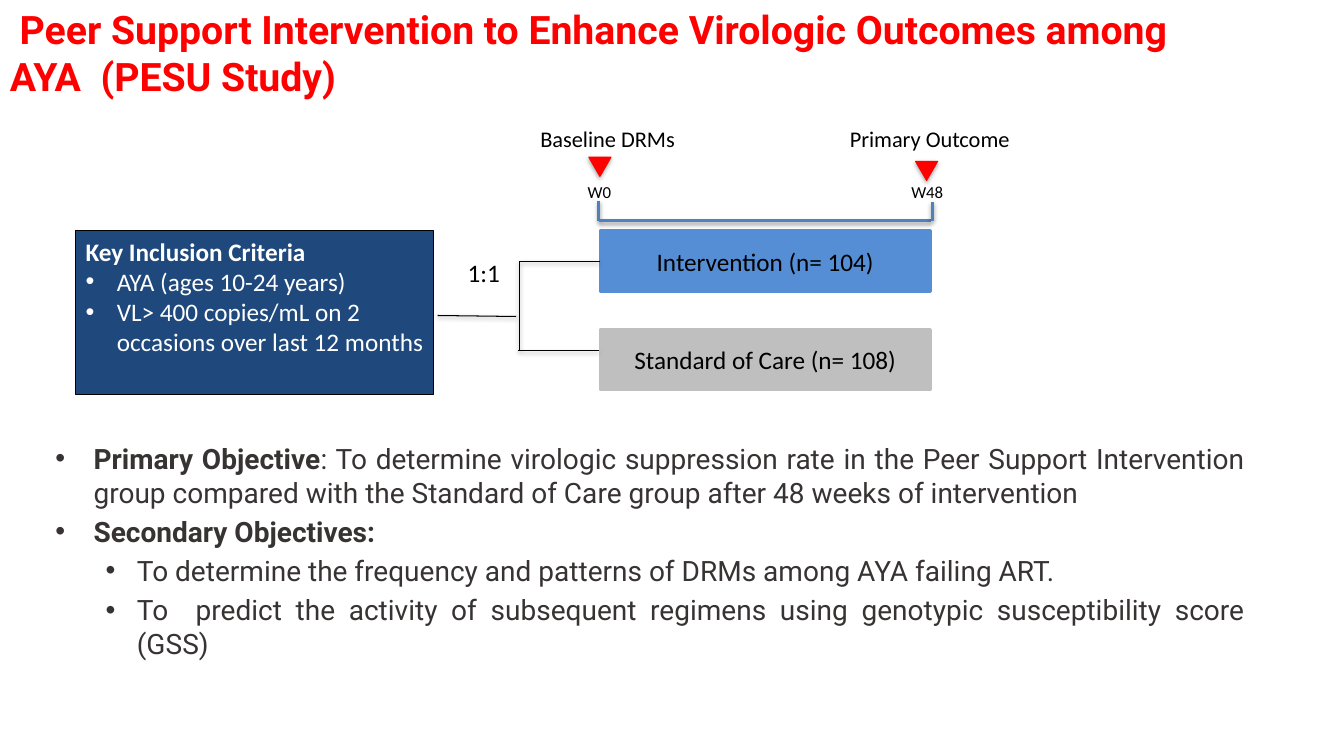
from dataclasses import dataclass

from lxml import etree
from pptx import Presentation
from pptx import util as u
from pptx.dml import color
from pptx.enum import shapes, text
from pptx.oxml import ns

BLACK, WHITE, RED, INK = "000000", "FFFFFF", "FF0000", "383333"
STEEL, NAVY, BLUE, GRAY = "4F81BD", "1F497D", "558ED5", "BFBFBF"
LEFT, MID, JUST = text.PP_ALIGN.LEFT, text.PP_ALIGN.CENTER, text.PP_ALIGN.JUSTIFY


@dataclass
class Run:
    words: str
    bold: bool = False


@dataclass
class Para:
    runs: list[Run]
    margin: float = 0
    hang: float = 0
    level: int = 0


@dataclass
class Style:
    size: float
    font: str = "Calibri"
    ink: str = BLACK
    align: text.PP_ALIGN = LEFT
    gap: float = 0
    middle: bool = False


@dataclass
class Label:
    words: str
    left: float
    top: float
    width: float
    height: float
    size: float


@dataclass
class Arm:
    words: str
    top: float
    fill: str


@dataclass
class Wire:
    x1: float
    y1: float
    x2: float
    y2: float
    ink: str = BLACK
    weight: float = 0.75


def rgb(code: str) -> color.RGBColor:
    return color.RGBColor.from_string(code)


def shade(item, alpha: int, dist: float) -> None:
    """Give a shape or connector a soft shadow straight below it."""
    props = item._element.spPr
    group = props.find(ns.qn("a:effectLst"))
    if group is None:
        group = etree.SubElement(props, ns.qn("a:effectLst"))
    outer = etree.SubElement(group, ns.qn("a:outerShdw"), blurRad=str(u.Pt(3.1)),
                             dist=str(u.Pt(dist)), dir="5400000", rotWithShape="0")
    tint = etree.SubElement(outer, ns.qn("a:srgbClr"), val=BLACK)
    etree.SubElement(tint, ns.qn("a:alpha"), val=str(alpha * 1000))


def write(item, paras: list[Para], style: Style) -> None:
    frame = item.text_frame
    frame.word_wrap = True
    frame.vertical_anchor = text.MSO_ANCHOR.MIDDLE if style.middle else text.MSO_ANCHOR.TOP
    for place, para in enumerate(paras):
        line = frame.add_paragraph() if place else frame.paragraphs[0]
        line.alignment = style.align
        line.level = para.level
        if place and style.gap:
            line.space_before = u.Pt(style.gap)
        if para.hang:
            props = line._p.get_or_add_pPr()
            props.set("marL", str(u.Inches(para.margin)))
            props.set("indent", str(-u.Inches(para.hang)))
            etree.SubElement(props, ns.qn("a:buFont"), typeface="Arial")
            etree.SubElement(props, ns.qn("a:buChar"), char="•")
        for part in para.runs:
            run = line.add_run()
            run.text = part.words
            run.font.name, run.font.size = style.font, u.Pt(style.size)
            run.font.bold = part.bold
            run.font.color.rgb = rgb(style.ink)


def add_text(slide, at: tuple, paras: list[Para], style: Style):
    box = slide.shapes.add_textbox(*map(u.Inches, at))
    write(box, paras, style)
    return box


def add_form(slide, kind, at: tuple, fill: str, edge: str, weight: float):
    form = slide.shapes.add_shape(kind, *map(u.Inches, at))
    form.shadow.inherit = False
    form.fill.solid()
    form.fill.fore_color.rgb = rgb(fill)
    form.line.color.rgb = rgb(edge)
    form.line.width = u.Pt(weight)
    return form


def add_wire(slide, wire: Wire):
    ends = map(u.Inches, (wire.x1, wire.y1, wire.x2, wire.y2))
    link = slide.shapes.add_connector(shapes.MSO_CONNECTOR.STRAIGHT, *ends)
    link.line.color.rgb = rgb(wire.ink)
    link.line.width = u.Pt(wire.weight)
    shade(link, 38, 1.6)
    return link


RECT = shapes.MSO_SHAPE.RECTANGLE
ARM_X, ARM_W, ARM_H = 5.95, 3.28, 0.6

TITLE = " Peer Support Intervention to Enhance Virologic Outcomes among AYA  (PESU Study)"
GOALS = [
    Para([Run("Primary Objective", True),
          Run(": To determine virologic suppression rate in the Peer Support Intervention "
              "group compared with the Standard of Care group after 48 weeks of intervention")],
         0.38, 0.38),
    Para([Run("Secondary Objectives:", True)], 0.38, 0.38),
    Para([Run("To determine the frequency and patterns of DRMs among AYA failing ART.")],
         0.81, 0.31, 1),
    Para([Run("To  predict the activity of subsequent regimens using genotypic "
              "susceptibility score (GSS)")], 0.81, 0.31, 1),
]
RULES = [
    Para([Run("Key Inclusion Criteria", True)]),
    Para([Run("AYA (ages 10-24 years)")], 0.31, 0.31),
    Para([Run("VL> 400 copies/mL on 2 occasions over last 12 months")], 0.31, 0.31),
]
ARMS = [Arm("Intervention (n= 104)", 2.29, BLUE),
        Arm("Standard of Care (n= 108)", 3.27, GRAY)]
WIRES = [
    # Split into two arms
    Wire(4.34, 3.13, 5.12, 3.14),
    Wire(5.15, 2.59, 5.15, 3.47),
    Wire(5.14, 3.48, 5.94, 3.48),
    # Time bracket
    Wire(5.94, 1.99, 5.94, 2.19, STEEL, 2),
    Wire(5.94, 2.19, 9.23, 2.19, STEEL, 2),
    Wire(9.25, 2, 9.25, 2.19, STEEL, 2),
]
LABELS = [
    Label("1:1", 4.54, 2.5, 0.58, 0.4, 18),
    Label("W0", 5.73, 1.75, 0.72, 0.3, 12),
    Label("W48", 8.94, 1.75, 0.72, 0.3, 12),
    Label("Baseline DRMs", 5.26, 1.19, 1.85, 0.37, 16),
    Label("Primary Outcome", 8.33, 1.19, 1.85, 0.37, 16),
]
MARKS = [(5.84, 1.56), (9.08, 1.6)]


def main() -> None:
    deck = Presentation()
    deck.slide_width, deck.slide_height = u.Inches(13.33), u.Inches(7.5)
    slide = deck.slides.add_slide(deck.slide_layouts[6])

    # Title and objectives
    add_text(slide, (0, -0.11, 12, 1.25), [Para([Run(TITLE, True)])],
             Style(28, "Roboto", RED, middle=True))
    add_text(slide, (0.45, 4.33, 12, 2.05), GOALS, Style(20, "Roboto", INK, JUST, 4))

    # Inclusion criteria
    card = add_form(slide, RECT, (0.75, 2.29, 3.55, 1.62), NAVY, BLACK, 0.75)
    write(card, RULES, Style(18, ink=WHITE))

    # Study arms and lines
    boxes = []
    for arm in ARMS:
        box = add_form(slide, RECT, (ARM_X, arm.top, ARM_W, ARM_H), arm.fill, arm.fill, 2)
        write(box, [Para([Run(arm.words)])], Style(18, align=MID, middle=True))
        boxes.append(box)
    for wire in WIRES:
        add_wire(slide, wire)
    branch = add_wire(slide, Wire(5.16, 2.59, ARM_X, 2.59))
    branch.end_connect(boxes[0], 1)

    # Time points
    for tag in LABELS:
        add_text(slide, (tag.left, tag.top, tag.width, tag.height),
                 [Para([Run(tag.words)])], Style(tag.size))
    for left, top in MARKS:
        mark = add_form(slide, shapes.MSO_SHAPE.ISOSCELES_TRIANGLE,
                        (left, top, 0.22, 0.19), RED, RED, 0.75)
        mark.rotation = 180
        shade(mark, 35, 1.8)

    deck.save("out.pptx")


if __name__ == "__main__":
    main()
